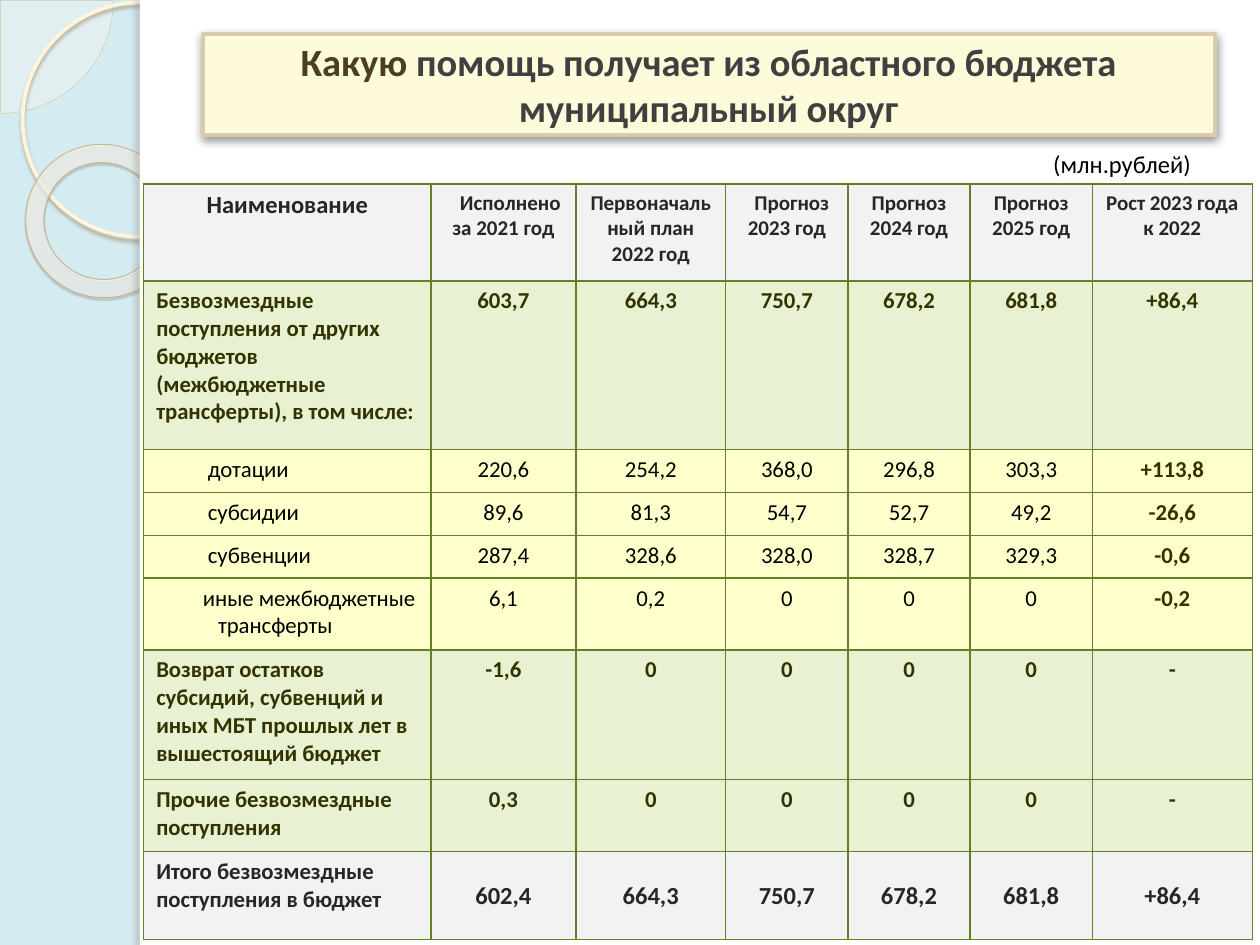
from lxml import etree
from pptx import Presentation
from pptx.dml.color import RGBColor as RGB
from pptx.enum.shapes import MSO_SHAPE as Shp
from pptx.enum.text import MSO_ANCHOR as Anchor, MSO_AUTO_SIZE as Fit, PP_ALIGN as Al
from pptx.oxml import parse_xml
from pptx.oxml.ns import qn
from pptx.util import Inches, Pt

C = {
    "sky": "D4EBF1", "white": "FFFFFF", "cream": "FEFAF4", "sand": "D3C39F",
    "ring": "FFF5DE", "donut": "C7B893", "title": "FEFBDA", "frame": "DACCAB",
    "brown": "4B3E21", "slate": "404040", "grey": "F2F2F2", "green": "E8F2D3",
    "yellow": "FFFFCC", "border": "638026", "ink": "262626", "olive": "333300",
    "black": "000000",
}
FONT = "Calibri"
A_NS = 'xmlns:a="http://schemas.openxmlformats.org/drawingml/2006/main"'


def style(sp, fill=None, line=None, width=0, shadow=None):
    """Set fill, outline and (colour, alpha %, blur, distance, angle) shadow."""
    if fill:
        sp.fill.solid()
        sp.fill.fore_color.rgb = RGB.from_string(C[fill])
    else:
        sp.fill.background()
    if line:
        sp.line.color.rgb = RGB.from_string(C[line])
        sp.line.width = Pt(width)
    else:
        sp.line.fill.background()
    sp.shadow.inherit = False
    if shadow:
        color, alpha, blur, dist, angle = shadow
        effects = sp.element.spPr.find(qn("a:effectLst"))
        effects.append(parse_xml(
            f'<a:outerShdw {A_NS} blurRad="{Pt(blur)}" dist="{Pt(dist)}" '
            f'dir="{angle * 60000}" algn="ctr" rotWithShape="0"><a:srgbClr val="{color}">'
            f'<a:alpha val="{alpha * 1000}"/></a:srgbClr></a:outerShdw>'))


def add_run(p, text, size, color, bold=False):
    r = p.add_run()
    r.text = text
    r.font.name, r.font.size, r.font.bold = FONT, Pt(size), bold
    r.font.color.rgb = RGB.from_string(C[color])


prs = Presentation()
prs.slide_width, prs.slide_height = Inches(10), Inches(7.5)
s = prs.slides.add_slide(prs.slide_layouts[5])
s.background.fill.solid()
s.background.fill.fore_color.rgb = RGB.from_string(C["sky"])

# Side decoration and white page
decor = [
    (Shp.PIE, -0.89, -0.89, 1.79, 1.79, "cream", "sand", 0.25, None),
    (Shp.OVAL, 0.18, 0.02, 1.86, 1.86, None, "ring", 2.15, ("B0A68F", 85, 2, 2, 90)),
    (Shp.DONUT, 0.2, 1.15, 1.23, 1.21, "cream", "donut", 0.58, ("5A5444", 35, 1, 1.2, 75)),
    (Shp.RECTANGLE, 1.11, 0, 8.89, 7.5, "white", None, 0, None),
    (Shp.RECTANGLE, 1.11, 0, 0.08, 7.5, "white", None, 0, ("736F63", 25, 3, 3, 180)),
]
for kind, x, y, w, h, fill, line, width, shadow in decor:
    sp = s.shapes.add_shape(kind, Inches(x), Inches(y), Inches(w), Inches(h))
    style(sp, fill, line, width, shadow)
    solid = sp.element.spPr.find(qn("a:solidFill"))
    if kind == Shp.PIE:
        sp.adjustments[0], sp.adjustments[1] = 0, 54.02
        etree.SubElement(solid[0], qn("a:alpha"), val="33000")
    elif kind == Shp.DONUT:
        sp.rotation = 38.6
        sp.adjustments[0] = 0.12
        stops = "".join(
            f'<a:gs pos="{pos}000"><a:srgbClr val="{color}"><a:alpha val="{alpha}000"/>'
            f'</a:srgbClr></a:gs>'
            for pos, color, alpha in [(0, "FFFCF6", 70), (70, "FFFEFB", 55), (100, "F0D28E", 60)])
        solid.getparent().replace(solid, parse_xml(
            f'<a:gradFill {A_NS} rotWithShape="1"><a:gsLst>{stops}</a:gsLst><a:path path="circle">'
            '<a:fillToRect l="-408000" t="-50000" r="508000" b="150000"/></a:path></a:gradFill>'))

# Title, brought in front of the page
title = s.shapes.title
title.left, title.top, title.width, title.height = map(Inches, (1.61, 0.27, 8.03, 0.8))
title.element.spPr.append(parse_xml(
    f'<a:prstGeom {A_NS} prst="roundRect"><a:avLst/></a:prstGeom>'))
style(title, "title", "frame", 2.25, ("000000", 43, 5, 2, 90))
title.element.getparent().append(title.element)
tf = title.text_frame
tf.auto_size, tf.word_wrap, tf.vertical_anchor = Fit.NONE, True, Anchor.MIDDLE
tf.margin_top = tf.margin_bottom = 0
p = tf.paragraphs[0]
p.alignment = Al.CENTER
add_run(p, "Какую", 22, "brown", True)
add_run(p, " помощь получает из областного бюджета", 22, "slate", True)
p = tf.add_paragraph()
p.alignment = Al.CENTER
add_run(p, "муниципальный округ", 22, "slate", True)

# Table: kind of row, height, cells
rows = [
    ("head", 0.77, ["Наименование", "Исполнено за 2021 год", "Первоначальный план\n2022 год",
                    "Прогноз 2023 год", "Прогноз 2024 год", "Прогноз 2025 год",
                    "Рост 2023 года к 2022"]),
    ("group", 1.34, ["Безвозмездные поступления от других бюджетов (межбюджетные трансферты), "
                     "в том числе:", "603,7", "664,3", "750,7", "678,2", "681,8", "+86,4"]),
    ("item", 0.34, ["дотации", "220,6", "254,2", "368,0", "296,8", "303,3", "+113,8"]),
    ("item", 0.34, ["субсидии", "89,6", "81,3", "54,7", "52,7", "49,2", "-26,6"]),
    ("item", 0.34, ["субвенции", "287,4", "328,6", "328,0", "328,7", "329,3", "-0,6"]),
    ("item", 0.57, ["иные межбюджетные трансферты", "6,1", "0,2", "0", "0", "0", "-0,2"]),
    ("group", 1.03, ["Возврат остатков субсидий, субвенций и иных МБТ прошлых лет в "
                     "вышестоящий бюджет", "-1,6", "0", "0", "0", "0", "-"]),
    ("group", 0.57, ["Прочие безвозмездные поступления", "0,3", "0", "0", "0", "0", "-"]),
    ("total", 0.7, ["Итого безвозмездные поступления в бюджет",
                    "602,4", "664,3", "750,7", "678,2", "681,8", "+86,4"]),
]
# Row kind: fill, text colour, size in the first column, size in the others
looks = {
    "head": ("grey", "ink", 14, 12), "group": ("green", "olive", 13, 13),
    "item": ("yellow", "black", 13, 13), "total": ("grey", "ink", 13, 14),
}
# (row, column): left margin and first-line indent
indents = {(0, 1): (0, 0.11), (0, 3): (0, 0.08), (2, 0): (0.41, 0), (3, 0): (0.41, 0),
           (4, 0): (0.41, 0), (5, 0): (0.49, -0.12)}
col_widths = [2.28, 1.15, 1.19, 0.97, 0.97, 0.97, 1.27]

table = s.shapes.add_table(len(rows), len(col_widths), Inches(1.14), Inches(1.46),
                           Inches(8.78), Inches(6)).table
for col, width in zip(table.columns, col_widths):
    col.width = Inches(width)
for i, (kind, height, texts) in enumerate(rows):
    table.rows[i].height = Inches(height)
    fill, color, first_size, size = looks[kind]
    for j, text in enumerate(texts):
        cell = table.cell(i, j)
        tcPr = cell._tc.get_or_add_tcPr()
        for side in ("lnL", "lnR", "lnT", "lnB"):
            tcPr.append(parse_xml(
                f'<a:{side} {A_NS} w="{Pt(1)}"><a:solidFill><a:srgbClr val="{C["border"]}"/>'
                f'</a:solidFill></a:{side}>'))
        cell.fill.solid()
        cell.fill.fore_color.rgb = RGB.from_string(C[fill])
        if kind == "total" and j:
            cell.vertical_anchor = Anchor.MIDDLE
        growth = kind == "item" and j == len(texts) - 1
        for n, line in enumerate(text.split("\n")):
            tf = cell.text_frame
            p = tf.add_paragraph() if n else tf.paragraphs[0]
            p.alignment = Al.CENTER if j or kind == "head" else Al.LEFT
            if (i, j) in indents:
                margin, indent = indents[i, j]
                pPr = p._p.get_or_add_pPr()
                pPr.set("marL", str(Inches(margin)))
                pPr.set("indent", str(Inches(indent)))
            add_run(p, line, size if j else first_size, "olive" if growth else color,
                    kind != "item" or growth)

# Unit note
tf = s.shapes.add_textbox(Inches(8.26), Inches(1.13), Inches(1.35), Inches(0.34)).text_frame
tf.word_wrap = True
tf.auto_size = Fit.SHAPE_TO_FIT_TEXT
add_run(tf.paragraphs[0], "(млн.рублей)", 14, "black")

prs.save("out.pptx")
